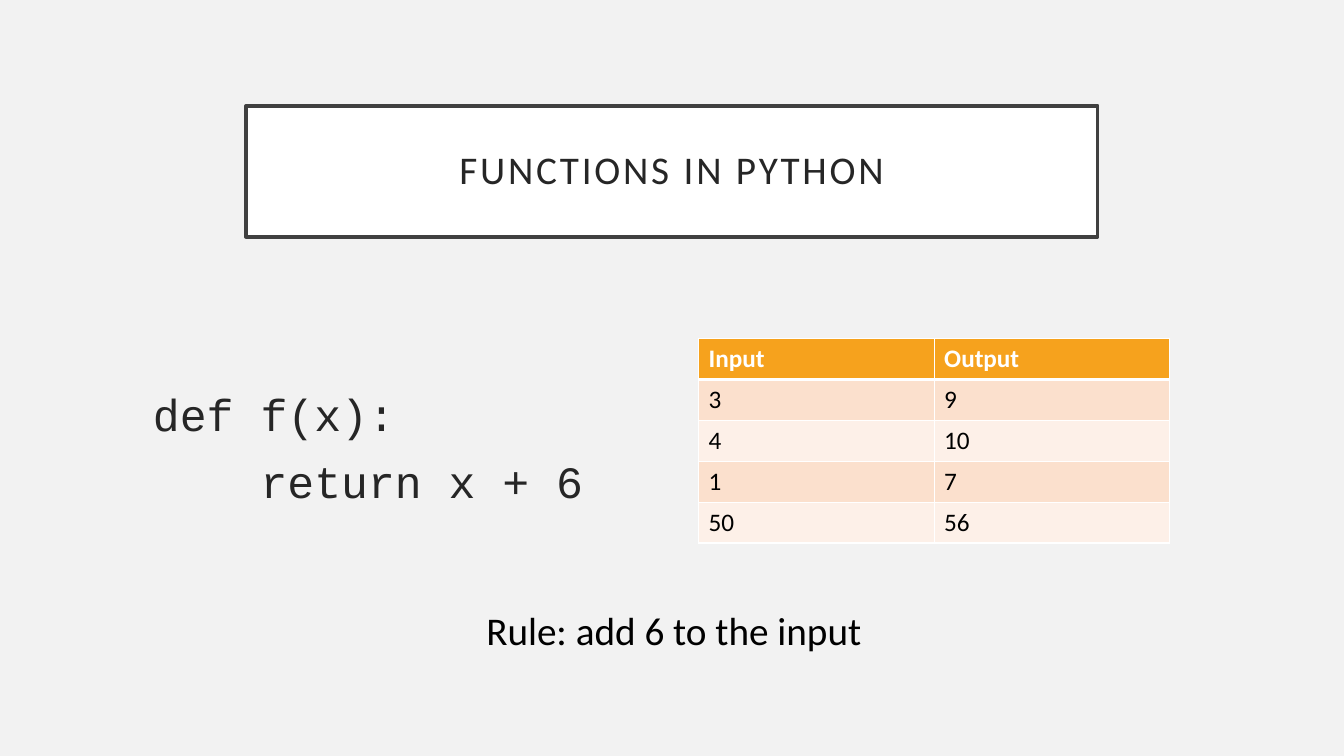
from dataclasses import dataclass
from typing import Any

import pptx
import pptx.dml.color
import pptx.enum.shapes
import pptx.enum.text
import pptx.oxml.ns
import pptx.util
from lxml import etree

Pt = pptx.util.Pt
CENTER = pptx.enum.text.PP_ALIGN.CENTER
MIDDLE = pptx.enum.text.MSO_ANCHOR.MIDDLE
TOP = pptx.enum.text.MSO_ANCHOR.TOP

INK = "262626"
BLACK = "000000"
WHITE = "FFFFFF"
HEADER_FILL = "F6A21D"
BAND_FILLS = ("FBE0CD", "FDF0E8")

ROWS = (("Input", "Output"), ("3", "9"), ("4", "10"), ("1", "7"), ("50", "56"))
COLUMN_WIDTH = 168.25
ROW_HEIGHT = 29.2


@dataclass(frozen=True)
class Area:
    left: float
    top: float
    width: float
    height: float

    def lengths(self) -> tuple[Any, ...]:
        return Pt(self.left), Pt(self.top), Pt(self.width), Pt(self.height)


@dataclass(frozen=True)
class Style:
    size: float
    color: str
    font: str = "Calibri"
    bold: bool = False


@dataclass(frozen=True)
class TextBlock:
    area: Area
    lines: tuple[str, ...]
    style: Style
    frame_format: dict[str, Any]
    paragraph_format: dict[str, Any]
    gap: float = 0


TITLE_AREA = Area(175.7, 75.6, 608.4, 93.6)
TABLE_AREA = Area(499, 241.9, 2 * COLUMN_WIDTH, len(ROWS) * ROW_HEIGHT)
TITLE_STYLE = Style(28, INK)

TEXT_BLOCKS = (
    TextBlock(
        Area(102.2, 234, 330.5, 170.6),
        ("def f(x):", "    return x + 6"),
        Style(32, INK, "Courier New"),
        {"vertical_anchor": MIDDLE},
        {},
        gap=10,
    ),
    TextBlock(
        Area(313.2, 429.8, 336.2, 41),
        ("Rule: add 6 to the input",),
        Style(28, BLACK),
        {"vertical_anchor": TOP},
        {"alignment": CENTER},
    ),
)


def rgb(color: str) -> pptx.dml.color.RGBColor:
    return pptx.dml.color.RGBColor.from_string(color)


def apply(target: Any, values: dict[str, Any]) -> None:
    for name, value in values.items():
        setattr(target, name, value)


def paint(target: Any, color: str) -> None:
    target.fill.solid()
    target.fill.fore_color.rgb = rgb(color)


def write(para: Any, text: str, style: Style) -> Any:
    span = para.add_run()
    span.text = text
    apply(span.font, {"name": style.font, "size": Pt(style.size), "bold": style.bold})
    span.font.color.rgb = rgb(style.color)
    return span


def add_title(page: Any) -> None:
    box = page.shapes.add_shape(
        pptx.enum.shapes.MSO_SHAPE.RECTANGLE, *TITLE_AREA.lengths()
    )
    box.shadow.inherit = False
    paint(box, WHITE)
    box.line.color.rgb = rgb("404040")
    box.line.width = Pt(2.5)
    apply(box.text_frame, {"word_wrap": True, "vertical_anchor": MIDDLE})
    para = box.text_frame.paragraphs[0]
    apply(para, {"alignment": CENTER, "line_spacing": 0.9})
    span = write(para, "FUNCTIONS IN PYTHON", TITLE_STYLE)
    span.font._element.set("spc", "200")


def add_text(page: Any, block: TextBlock) -> None:
    box = page.shapes.add_textbox(*block.area.lengths())
    frame = box.text_frame
    apply(frame, {"word_wrap": True, **block.frame_format})
    for index, line in enumerate(block.lines):
        para = frame.add_paragraph() if index else frame.paragraphs[0]
        apply(para, block.paragraph_format)
        if index:
            para.space_before = Pt(block.gap)
        write(para, line, block.style)


def add_borders(cell: Any, widths: dict[str, float]) -> None:
    """Draw white cell borders; must run before the cell is filled."""
    qn = pptx.oxml.ns.qn
    properties = cell._tc.get_or_add_tcPr()
    for side, width in widths.items():
        line = etree.SubElement(properties, qn(f"a:ln{side}"), w=str(int(Pt(width))))
        fill = etree.SubElement(line, qn("a:solidFill"))
        etree.SubElement(fill, qn("a:srgbClr"), val=WHITE)


def add_values_table(page: Any) -> None:
    table = page.shapes.add_table(len(ROWS), 2, *TABLE_AREA.lengths()).table
    for column in table.columns:
        column.width = Pt(COLUMN_WIDTH)
    for index, values in enumerate(ROWS):
        table.rows[index].height = Pt(ROW_HEIGHT)
        header = index == 0
        style = Style(18, WHITE if header else BLACK, bold=header)
        fill = HEADER_FILL if header else BAND_FILLS[(index - 1) % 2]
        widths = {"L": 1, "R": 1, "T": 3 if index == 1 else 1, "B": 3 if header else 1}
        for cell, value in zip(table.rows[index].cells, values):
            add_borders(cell, widths)
            paint(cell, fill)
            write(cell.text_frame.paragraphs[0], value, style)


def main() -> None:
    deck = pptx.Presentation()
    apply(deck, {"slide_width": Pt(960), "slide_height": Pt(540)})
    page = deck.slides.add_slide(deck.slide_layouts[6])
    paint(page.background, "F2F2F2")
    add_title(page)
    add_values_table(page)
    for block in TEXT_BLOCKS:
        add_text(page, block)
    deck.save("out.pptx")


if __name__ == "__main__":
    main()
